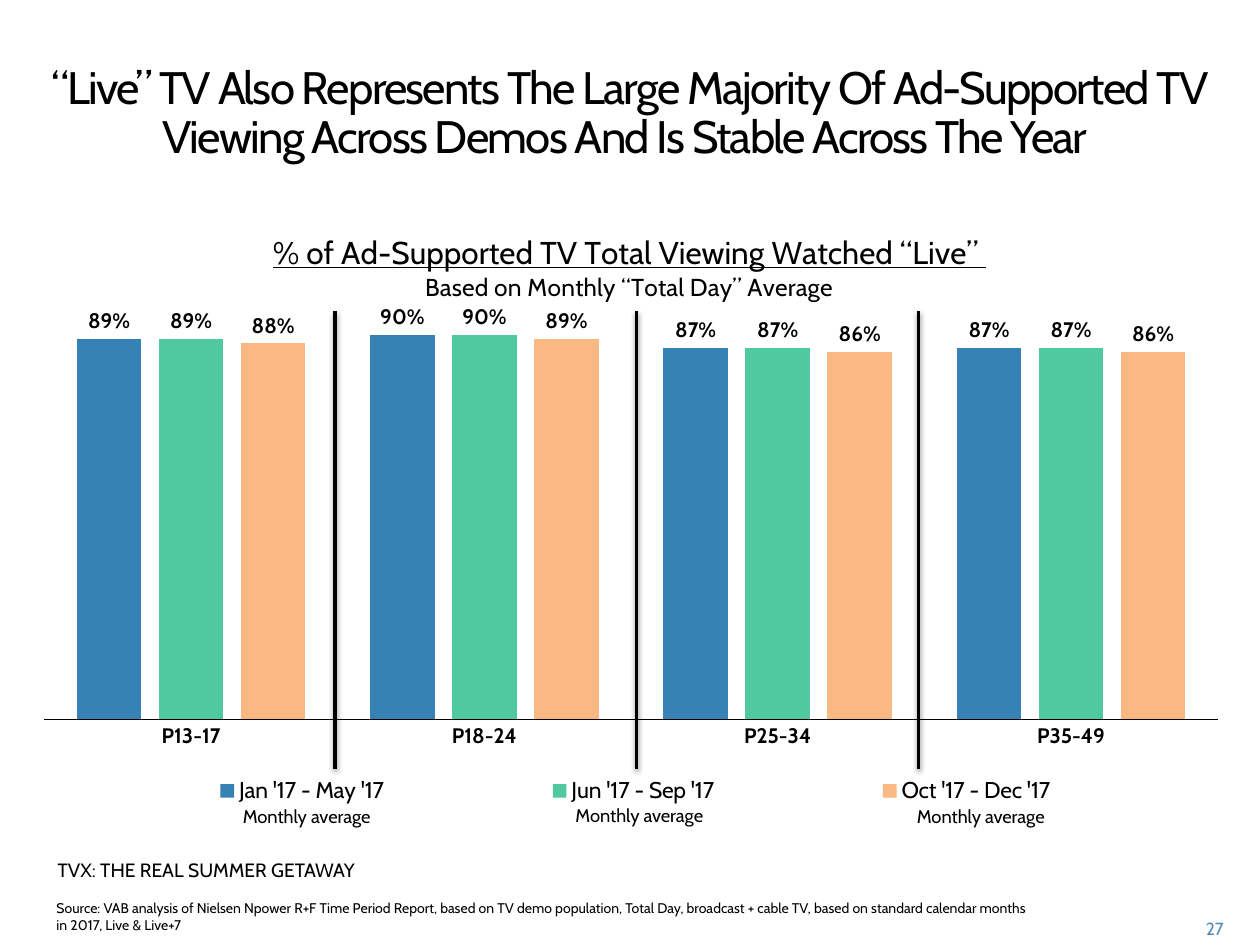
"""Build a slide on the share of TV viewing watched live."""
from lxml import etree
from pptx import Presentation
from pptx import util as u
from pptx.chart.data import CategoryChartData
from pptx.dml.color import RGBColor
from pptx.enum import chart as charts, shapes, text
from pptx.oxml import parse_xml
from pptx.oxml.ns import nsdecls, qn

FONT = "Cabin"
COLORS = {"black": "000000", "number": "508ABA", "blue": "3682B4", "green": "50C8A0", "orange": "FAB982"}
CATEGORIES = ["P13-17", "P18-24", "P25-34", "P35-49"]
SERIES = [
    ("Jan '17 - May '17", (0.89, 0.90, 0.87, 0.87), "blue"),
    ("Jun '17 - Sep '17", (0.89, 0.90, 0.87, 0.87), "green"),
    ("Oct '17 - Dec '17", (0.88, 0.89, 0.86, 0.86), "orange"),
]


def rgb(name):
    """Return a named colour."""
    return RGBColor.from_string(COLORS[name])


def style_font(font, size, color="black", bold=False):
    """Set the face, size, weight and colour of a font."""
    font.name = FONT
    font.size = u.Pt(size)
    font.bold = bold
    font.color.rgb = rgb(color)


def add_text(slide, box, content, size, color="black", align=text.PP_ALIGN.LEFT):
    """Add a wrapped text box with one paragraph."""
    frame = slide.shapes.add_textbox(*map(u.Inches, box)).text_frame
    frame.word_wrap = True
    frame.text = content
    paragraph = frame.paragraphs[0]
    paragraph.alignment = align
    style_font(paragraph.runs[0].font, size, color)


def set_title(slide, content):
    """Place and format the title placeholder."""
    title = slide.shapes.title
    title.left, title.top, title.width, title.height = map(u.Inches, (0.18, 0.42, 9.63, 0.97))
    frame = title.text_frame
    frame.text = content
    frame.word_wrap = True
    frame.auto_size = text.MSO_AUTO_SIZE.NONE
    frame.vertical_anchor = text.MSO_ANCHOR.MIDDLE
    paragraph = frame.paragraphs[0]
    paragraph.alignment = text.PP_ALIGN.CENTER
    paragraph.line_spacing = u.Pt(28)
    run = paragraph.runs[0]
    style_font(run.font, 26)
    run.font._element.set("spc", "-100")


def add_divider(slide, x):
    """Add a vertical line with a soft shadow between two age groups."""
    line = slide.shapes.add_connector(
        shapes.MSO_CONNECTOR.STRAIGHT, u.Inches(x), u.Inches(2.47), u.Inches(x), u.Inches(6.1))
    line.line.color.rgb = rgb("black")
    line.line.width = u.Pt(2)
    line._element.spPr.append(parse_xml(
        f'<a:effectLst {nsdecls("a")}><a:outerShdw blurRad="39370" dist="20320" dir="5400000" '
        f'rotWithShape="0"><a:srgbClr val="{COLORS["black"]}"><a:alpha val="38000"/></a:srgbClr>'
        '</a:outerShdw></a:effectLst>'))


def set_layout(element, x, y, width, height, inner=False):
    """Give a chart part a fixed place as fractions of the chart."""
    for old in element.findall(qn("c:layout")):
        element.remove(old)
    layout = etree.Element(qn("c:layout"))
    manual = etree.SubElement(layout, qn("c:manualLayout"))
    settings = [("layoutTarget", "inner")] if inner else []
    settings += [("xMode", "edge"), ("yMode", "edge"), ("x", x), ("y", y), ("w", width), ("h", height)]
    for tag, value in settings:
        etree.SubElement(manual, qn(f"c:{tag}")).set("val", str(value))
    element.insert(0 if inner else 1, layout)


def set_chart_title(chart):
    """Write the two-line chart title."""
    frame = chart.chart_title.text_frame
    frame.text = "% of Ad-Supported TV Total Viewing Watched “Live” \nBased on Monthly “Total Day” Average"
    for paragraph, size in zip(frame.paragraphs, (18, 14)):
        style_font(paragraph.runs[0].font, size)
    frame.paragraphs[0].runs[0].font.underline = True
    chart.chart_title.include_in_layout = False


def add_viewing_chart(slide):
    """Add the clustered columns of live viewing by age group."""
    data = CategoryChartData(number_format="0%")
    data.categories = CATEGORIES
    for name, values, _ in SERIES:
        data.add_series(name, values)
    chart = slide.shapes.add_chart(
        charts.XL_CHART_TYPE.COLUMN_CLUSTERED,
        *map(u.Inches, (0.18, 1.66, 9.63, 4.81)), data).chart
    style_font(chart.font, 10)
    set_chart_title(chart)

    plot = chart.plots[0]
    plot.gap_width = 100
    plot.overlap = -27
    plot.vary_by_categories = False
    for series, (_, _, color) in zip(plot.series, SERIES):
        series.format.fill.solid()
        series.format.fill.fore_color.rgb = rgb(color)
        labels = series.data_labels
        labels.show_value = True
        labels.number_format = "0%"
        labels.number_format_is_linked = False
        labels.position = charts.XL_LABEL_POSITION.OUTSIDE_END
        style_font(labels.font, 12, bold=True)

    axis = chart.category_axis
    axis.major_tick_mark = charts.XL_TICK_MARK.NONE
    axis.format.line.color.rgb = rgb("black")
    axis.format.line.width = u.Pt(0.75)
    style_font(axis.tick_labels.font, 12, bold=True)
    chart.value_axis.minimum_scale = 0
    chart.value_axis.maximum_scale = 1
    chart.value_axis.has_major_gridlines = False
    chart.value_axis.visible = False

    chart.has_legend = True
    chart.legend.position = charts.XL_LEGEND_POSITION.BOTTOM
    chart.legend.include_in_layout = False
    style_font(chart.legend.font, 13)
    set_layout(chart.legend._element, 0.03, 0.93, 0.95, 0.06)
    set_layout(plot._element.getparent(), 0.018, 0.137, 0.967, 0.705, inner=True)


def main():
    """Build and save the slide."""
    presentation = Presentation()
    presentation.slide_width, presentation.slide_height = u.Inches(10), u.Inches(7.5)
    slide = presentation.slides.add_slide(presentation.slide_layouts[5])
    set_title(slide, "“Live” TV Also Represents The Large Majority Of Ad-Supported TV "
                     "Viewing Across Demos And Is Stable Across The Year ")
    add_viewing_chart(slide)
    for x in (2.66, 5.05, 7.29):
        add_divider(slide, x)
    for left, top in ((1.72, 6.34), (4.36, 6.33), (7.07, 6.34)):
        add_text(slide, (left, top, 1.43, 0.29), "Monthly average", 10.5, align=text.PP_ALIGN.CENTER)
    add_text(slide, (0.36, 6.76, 2.61, 0.47), "TVX: THE REAL SUMMER GETAWAY", 11)
    add_text(slide, (0.35, 7.09, 8, 0.26),
             "Source: VAB analysis of Nielsen Npower R+F Time Period Report, based on TV demo population, "
             "Total Day, broadcast + cable TV, based on standard calendar months in 2017, Live & Live+7", 8)
    add_text(slide, (9.2, 7.24, 0.61, 0.25), "27", 10, "number", text.PP_ALIGN.RIGHT)
    presentation.save("out.pptx")


if __name__ == "__main__":
    main()
